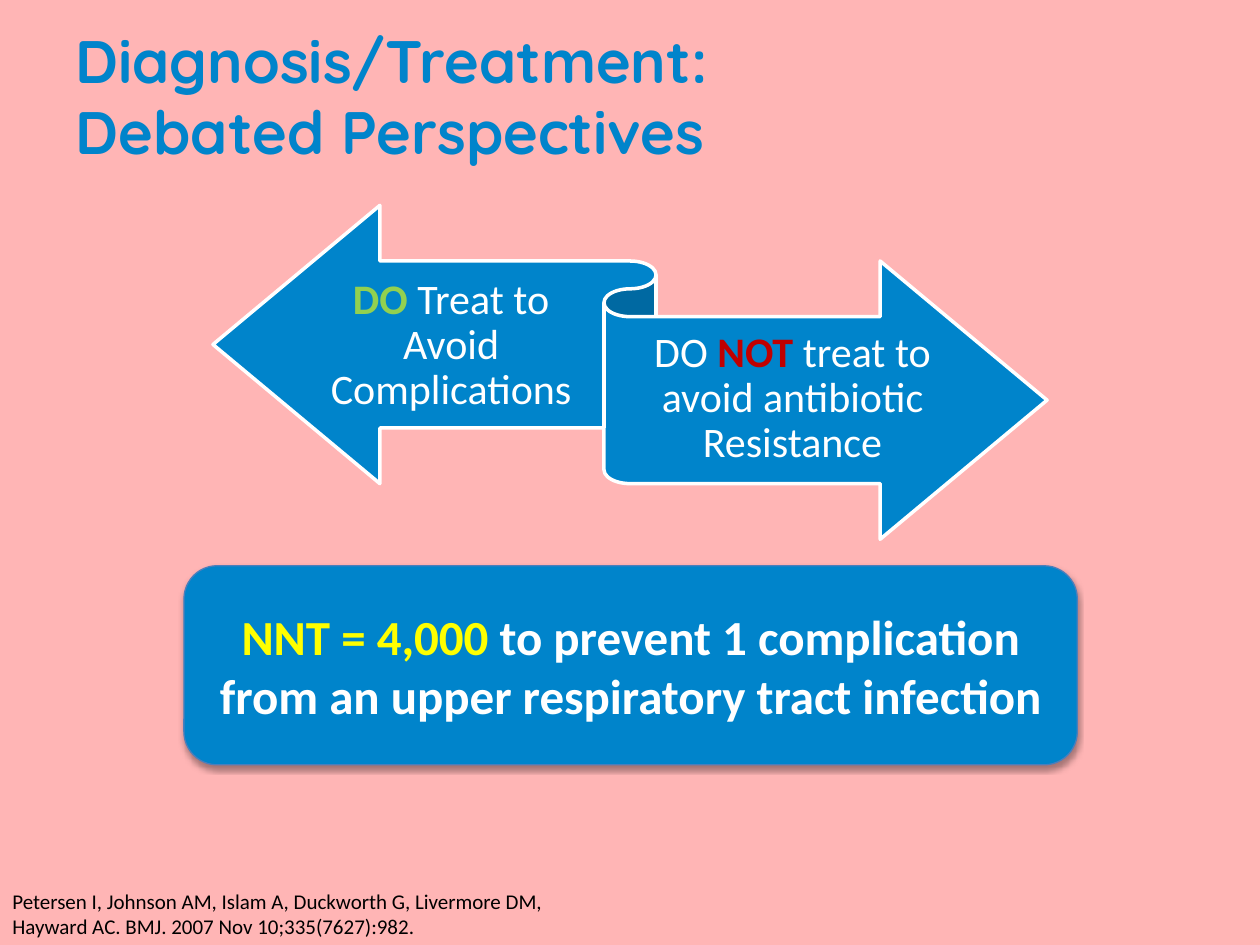
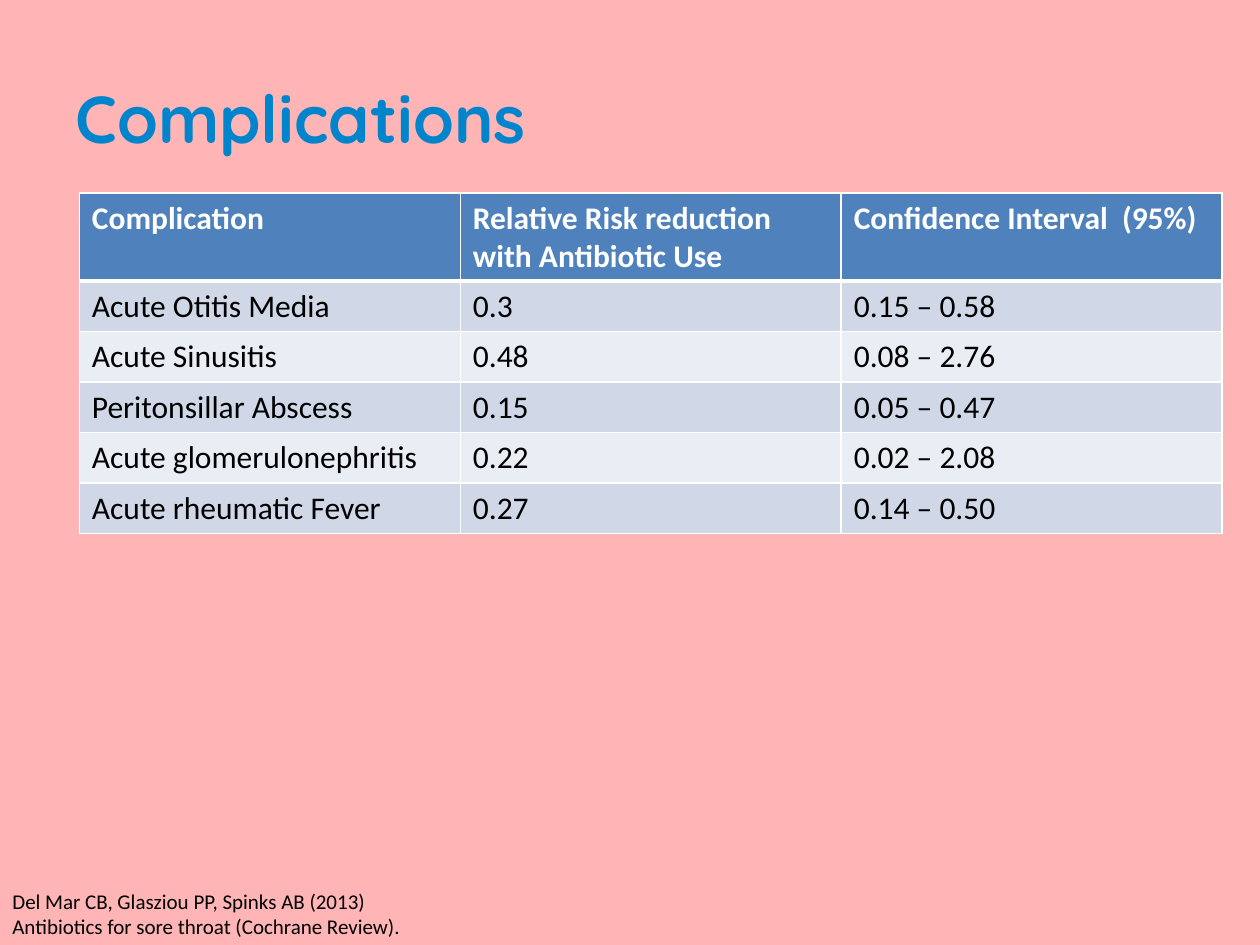
from lxml import etree
from pptx import Presentation, util as u
from pptx.dml.color import RGBColor
from pptx.enum import shapes, text
from pptx.oxml.ns import qn

ROSE, BLUE, WHITE, BLACK = "FFB5B5", "0084CB", "FFFFFF", "000000"
LIME, RED, YELLOW, EDGE = "92D050", "C00000", "FFFF00", "4B7EBC"
HEAD, BANDS = "4F81BD", ("D0D8E8", "E9EDF4")

DEBATE = {
    "title": "Diagnosis/Treatment:\vDebated Perspectives",
    "size": 34.2,
    "top": 0.13,
    "cite": "Petersen I, Johnson AM, Islam A, Duckworth G, Livermore DM, "
            "Hayward AC. BMJ. 2007 Nov 10;335(7627):982.",
    "width": 4.49,
}
RISKS = {
    "title": "Complications",
    "size": 38,
    "top": 0.3,
    "cite": "Del Mar CB, Glasziou PP, Spinks AB (2013) "
            "Antibiotics for sore throat (Cochrane Review).",
    "width": 3.51,
}
SIDES = [
    ((2.49, 2.1, 2.18, 1.3),
     [("DO", LIME, True), (" Treat to Avoid Complications", WHITE, False)]),
    ((5, 2.52, 2.58, 1.3),
     [("DO ", WHITE, False), ("NOT", RED, True),
      (" treat to avoid antibiotic Resistance", WHITE, False)]),
]
NNT = [("NNT = 4,000 ", YELLOW, True),
       ("to prevent 1 complication from an upper respiratory tract infection",
        WHITE, True)]
ROWS = [
    ("Complication", "Relative Risk reduction with Antibiotic Use",
     "Confidence Interval  (95%)"),
    ("Acute Otitis Media", "0.3", "0.15 – 0.58"),
    ("Acute Sinusitis", "0.48", "0.08 – 2.76"),
    ("Peritonsillar Abscess", "0.15", "0.05 – 0.47"),
    ("Acute glomerulonephritis", "0.22", "0.02 – 2.08"),
    ("Acute rheumatic Fever", "0.27", "0.14 – 0.50"),
]


def rgb(code):
    """Turn a hex string into a colour."""
    return RGBColor.from_string(code)


def box(*sides):
    """Turn inches into lengths."""
    return [u.Inches(side) for side in sides]


def style(font, size, color, bold=False, name="Calibri"):
    """Set the look of a font."""
    font.size, font.name, font.bold = u.Pt(size), name, bold
    font.color.rgb = rgb(color)


def write(shape, runs, size):
    """Fill a shape with centred runs of several colours."""
    frame = shape.text_frame
    frame.word_wrap = True
    frame.vertical_anchor = text.MSO_ANCHOR.MIDDLE
    para = frame.paragraphs[0]
    para.alignment = text.PP_ALIGN.CENTER
    for words, color, bold in runs:
        run = para.add_run()
        run.text = words
        style(run.font, size, color, bold)
    return frame


def start(deck, page):
    """Add a slide with its title and citation."""
    slide = deck.slides.add_slide(deck.slide_layouts[5])
    title = slide.shapes.title
    title.left, title.top, title.width, title.height = box(
        0.5, page["top"], 9, 1.25)
    title.text_frame.text = page["title"]
    title.text_frame.vertical_anchor = text.MSO_ANCHOR.MIDDLE
    para = title.text_frame.paragraphs[0]
    para.alignment = text.PP_ALIGN.LEFT
    style(para.font, page["size"], BLUE, True, "Quicksand")
    cite = slide.shapes.add_textbox(*box(0, 7, page["width"], 0.5)).text_frame
    cite.word_wrap = True
    cite.text = page["cite"]
    style(cite.paragraphs[0].font, 12, BLACK)
    return slide


def block(slide, kind, place, edge, weight):
    """Add a blue preset shape."""
    shape = slide.shapes.add_shape(kind, *box(*place))
    shape.shadow.inherit = False
    shape.fill.solid()
    shape.fill.fore_color.rgb = rgb(BLUE)
    shape.line.color.rgb = rgb(edge)
    shape.line.width = u.Pt(weight)
    return shape


def shade(shape):
    """Give a shape a soft shadow below."""
    list_ = shape.element.spPr.find(qn("a:effectLst"))
    outer = etree.SubElement(
        list_, qn("a:outerShdw"), blurRad=str(u.Pt(3.1)), dist=str(u.Pt(1.8)),
        dir="5400000", rotWithShape="0")
    tint = etree.SubElement(outer, qn("a:srgbClr"), val=BLACK)
    etree.SubElement(tint, qn("a:alpha"), val="35000")


def rule(cell, low):
    """Draw white borders round a cell, the lower one of a given weight."""
    props = cell._tc.get_or_add_tcPr()
    for side, weight in zip("LRTB", (1, 1, 1, low)):
        line = etree.SubElement(props, qn("a:ln" + side), w=str(u.Pt(weight)))
        fill = etree.SubElement(line, qn("a:solidFill"))
        etree.SubElement(fill, qn("a:srgbClr"), val=WHITE)


def debate(deck):
    """Build the slide with the two-way ribbon."""
    slide = start(deck, DEBATE)
    kinds = shapes.MSO_SHAPE
    block(slide, kinds.LEFT_RIGHT_RIBBON, (1.69, 1.63, 6.62, 2.65), WHITE, 2)
    for place, runs in SIDES:
        frame = write(slide.shapes.add_textbox(*box(*place)), runs, 24)
        frame.margin_left = frame.margin_right = 0
        frame.margin_top, frame.margin_bottom = box(0.09, 0.1)
        frame.paragraphs[0].line_spacing = 0.9
    card = block(slide, kinds.ROUNDED_RECTANGLE, (1.46, 4.49, 7.09, 1.58),
                 EDGE, 0.75)
    shade(card)
    write(card, NNT, 28)


def risks(deck):
    """Build the slide with the risk table."""
    slide = start(deck, RISKS)
    table = slide.shapes.add_table(
        len(ROWS), len(ROWS[0]), *box(0.63, 1.53, 9.07, 2.72)).table
    table.horz_banding = False
    for r, row in enumerate(ROWS):
        top = r == 0
        table.rows[r].height = u.Inches(0.7 if top else 0.4)
        for c, words in enumerate(row):
            cell = table.cell(r, c)
            cell.text = words
            style(cell.text_frame.paragraphs[0].font, 18,
                  WHITE if top else BLACK, top)
            rule(cell, 3 if top else 1)
            cell.fill.solid()
            cell.fill.fore_color.rgb = rgb(HEAD if top else BANDS[(r - 1) % 2])


def main():
    """Build and save the deck."""
    deck = Presentation()
    deck.slide_width, deck.slide_height = box(10, 7.5)
    back = deck.slide_master.background.fill
    back.solid()
    back.fore_color.rgb = rgb(ROSE)
    debate(deck)
    risks(deck)
    deck.save("out.pptx")


if __name__ == "__main__":
    main()
